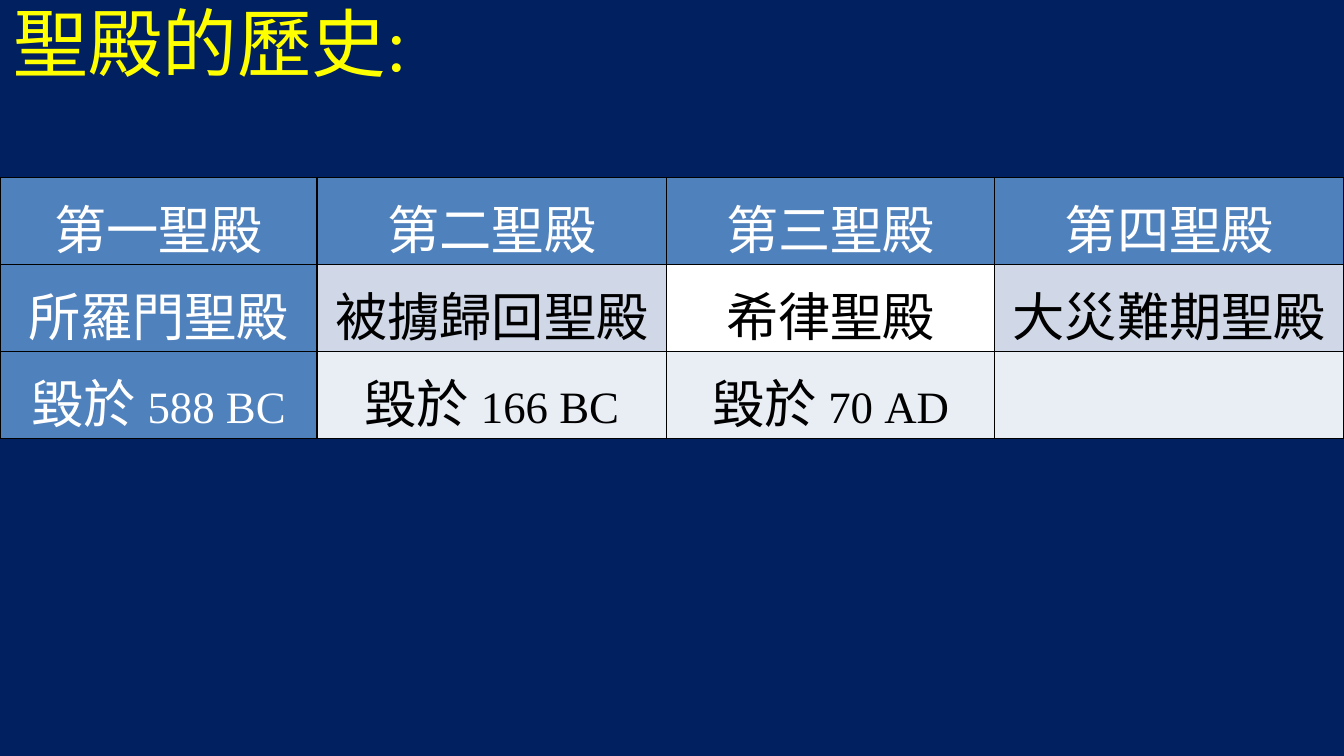
from dataclasses import dataclass

from lxml.etree import SubElement
from pptx import Presentation
from pptx.dml.color import RGBColor as Color
from pptx.enum.text import MSO_ANCHOR as Anchor, PP_ALIGN as Align
from pptx.oxml.ns import qn
from pptx.util import Emu, Inches, Pt


@dataclass(frozen=True)
class Theme:
    navy: str = "002060"
    yellow: str = "FFFF00"
    white: str = "FFFFFF"
    black: str = "000000"
    blue: str = "4F81BD"
    band: str = "D0D8E8"
    pale: str = "E9EDF4"
    serif: str = "Times New Roman"
    sans: str = "Noto Sans CJK JP"
    title: int = 40
    label: int = 28
    year: int = 24


class SlideBuilder:
    """Holds the theme and the current slide; lengths are shares of the slide."""

    def __init__(self, deck, theme):
        self.deck, self.theme = deck, theme
        self.page = deck.slides.add_slide(deck.slide_layouts[0])
        self.page.background.fill.solid()
        self.page.background.fill.fore_color.rgb = Color.from_string(theme.navy)

    def across(self, share):
        return round(self.deck.slide_width * share)

    def down(self, share):
        return round(self.deck.slide_height * share)

    def span(self, para, text, size, color, face=None):
        run = para.add_run()
        run.text = text
        font = run.font
        font.size, font.name = Pt(size), face or self.theme.serif
        font.color.rgb = Color.from_string(color)
        # Chinese characters use the sans face
        SubElement(font._element, qn("a:ea"), typeface=self.theme.sans)

    def heading(self, text, height):
        title = self.page.shapes.title.element
        title.getparent().remove(title)
        box = self.page.placeholders[1]
        box.left = box.top = 0
        box.width, box.height = self.across(1), self.down(height)
        box.text_frame.vertical_anchor = Anchor.TOP
        para = box.text_frame.paragraphs[0]
        para.alignment, para.line_spacing, para.space_before = Align.LEFT, 0.9, Pt(0)
        self.span(para, text, self.theme.title, self.theme.yellow)

    def border(self, cell):
        properties = cell._tc.get_or_add_tcPr()
        for side in ("lnL", "lnR", "lnT", "lnB"):
            line = SubElement(properties, qn(f"a:{side}"), w=str(int(Pt(1))))
            fill = SubElement(line, qn("a:solidFill"))
            SubElement(fill, qn("a:srgbClr"), val=self.theme.black)

    def cell(self, cell, spans, fill, color):
        self.border(cell)
        cell.fill.solid()
        cell.fill.fore_color.rgb = Color.from_string(fill)
        cell.margin_left = cell.margin_right = Inches(0.07)
        cell.margin_top = cell.margin_bottom = 0
        para = cell.text_frame.paragraphs[0]
        para.alignment, para.line_spacing = Align.CENTER, 1.15
        for text, size, face in spans:
            self.span(para, text, size, color, face)

    def table(self, rows, fills, widths, top, height):
        table = self.page.shapes.add_table(
            len(rows), len(widths), 0, self.down(top), self.across(1), self.down(height)
        ).table
        table.first_row = table.horz_banding = False
        for column, width in zip(table.columns, widths):
            column.width = self.across(width)
        for r, (row, shades) in enumerate(zip(rows, fills)):
            for c, (spans, shade) in enumerate(zip(row, shades)):
                color = self.theme.white if shade == self.theme.blue else self.theme.black
                self.cell(table.cell(r, c), spans, shade, color)


def main():
    theme = Theme()
    deck = Presentation()
    deck.slide_width = Inches(10)
    deck.slide_height = Emu(deck.slide_width * 9 // 16)
    slide = SlideBuilder(deck, theme)

    # Title
    slide.heading("聖殿的歷史:", height=0.96)

    # Table contents: temple number, name, year of destruction
    def label(text, face=theme.serif):
        return text, theme.label, face

    def destroyed(year):
        return [label("毀於 "), (year, theme.year, theme.serif)]

    rows = [
        [[label(f"第{number}聖殿")] for number in "一二三四"],
        [
            [label("所羅門聖殿")],
            [label("被擄歸回聖殿")],
            [label("希律", theme.sans), label("聖殿")],
            [label("大災難期聖殿")],
        ],
        [destroyed(year) for year in ("588 BC", "166 BC", "70 AD")] + [[]],
    ]
    fills = [
        [theme.blue] * 4,
        [theme.blue, theme.band, theme.white, theme.band],
        [theme.blue] + [theme.pale] * 3,
    ]

    # Table of the four temples
    slide.table(rows, fills, widths=(0.236, 0.26, 0.244, 0.26), top=0.235, height=0.286)

    deck.save("out.pptx")


if __name__ == "__main__":
    main()
